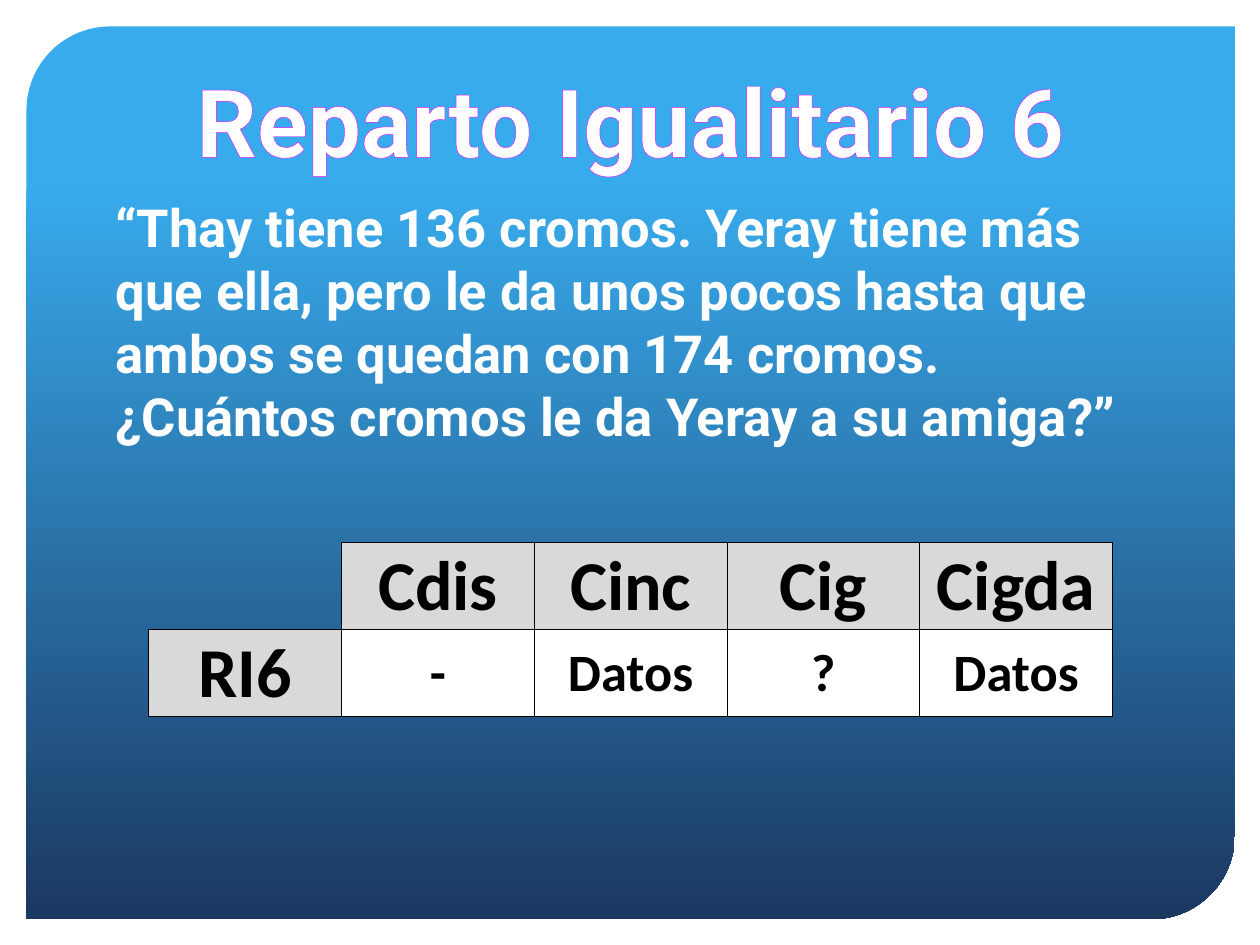
from dataclasses import dataclass

from lxml.etree import SubElement as Sub
from pptx import Presentation
from pptx.dml.color import RGBColor
from pptx.enum.shapes import MSO_SHAPE as Kind
from pptx.enum.text import MSO_ANCHOR as Anchor, MSO_AUTO_SIZE as Auto, PP_ALIGN as Align
from pptx.oxml.ns import qn
from pptx.util import Inches, Pt

WIDE, HIGH = Inches(10), Inches(7.5)
WHITE, BLACK, GREY = "FFFFFF", "000000", "D9D9D9"
CELL_W, CELL_H = Inches(1.53), Inches(0.69)


@dataclass
class Box:
    left: float
    top: float
    width: float
    height: float

    def place(self) -> tuple[int, int, int, int]:
        return (int(self.left * WIDE), int(self.top * HIGH),
                int(self.width * WIDE), int(self.height * HIGH))


@dataclass
class Cell:
    row: int
    col: int
    text: str = ""
    size: int = 40
    fill: str = GREY


def paint(tone: str) -> RGBColor:
    return RGBColor.from_string(tone)


def write(frame, text: str, *, size: int, font: str, tone: str = WHITE,
          align=Align.LEFT, edge: str = "") -> None:
    para = frame.paragraphs[0]
    para.alignment = align
    run = para.add_run()
    run.text = text
    face = run.font
    face.size, face.name, face.bold = Pt(size), font, True
    face.color.rgb = paint(tone)
    if edge:
        props = face._element
        line = Sub(props, qn("a:ln"), w=str(Pt(1)))
        Sub(Sub(line, qn("a:solidFill")), qn("a:srgbClr"), val=edge)
        props.insert(0, line)


def label(slide, box: Box, text: str, wrap: bool, **style) -> None:
    frame = slide.shapes.add_textbox(*box.place()).text_frame
    frame.word_wrap = wrap
    frame.auto_size = Auto.SHAPE_TO_FIT_TEXT
    write(frame, text, font="Roboto", **style)


def panel(slide, box: Box) -> None:
    shape = slide.shapes.add_shape(Kind.ROUND_2_DIAG_RECTANGLE, *box.place())
    shape.shadow.inherit = False
    shape.adjustments[0], shape.adjustments[1] = 0.094, 0
    shape.line.fill.background()
    shape.fill.gradient()
    shape.fill.gradient_angle = 270
    tones = ((0.17, "38ABED"), (1, "1B3861"))
    for stop, (place, tone) in zip(shape.fill.gradient_stops, tones):
        stop.position = place
        stop.color.rgb = paint(tone)


def border(cell, sides: str) -> None:
    props = cell._tc.get_or_add_tcPr()
    for side in "LRTB":
        line = Sub(props, qn(f"a:ln{side}"), w=str(Pt(0.5)))
        if side in sides:
            Sub(Sub(line, qn("a:solidFill")), qn("a:srgbClr"), val=BLACK)
        else:
            Sub(line, qn("a:noFill"))


def fill_cell(table, item: Cell) -> None:
    cell = table.cell(item.row, item.col)
    border(cell, "LRTB" if item.text else "RB")
    if not item.text:
        cell.fill.background()
        return
    cell.fill.solid()
    cell.fill.fore_color.rgb = paint(item.fill)
    cell.vertical_anchor = Anchor.MIDDLE
    cell.margin_left = cell.margin_right = cell.margin_top = Inches(0.01)
    cell.margin_bottom = 0
    write(cell.text_frame, item.text, size=item.size, font="Calibri",
          tone=BLACK, align=Align.CENTER)


def grid(slide, left: float, top: float) -> None:
    heads = ("Cdis", "Cinc", "Cig", "Cigda")
    data = ("-", "Datos", "?", "Datos")
    items = [Cell(0, 0), Cell(1, 0, "RI6")]
    items += [Cell(0, col, text) for col, text in enumerate(heads, 1)]
    items += [Cell(1, col, text, 30, WHITE) for col, text in enumerate(data, 1)]
    cols = len(heads) + 1
    table = slide.shapes.add_table(2, cols, int(left * WIDE), int(top * HIGH),
                                   cols * CELL_W, 2 * CELL_H).table
    table.first_row = table.horz_banding = False
    for col in table.columns:
        col.width = CELL_W
    for row in table.rows:
        row.height = CELL_H
    for item in items:
        fill_cell(table, item)


def main() -> None:
    deck = Presentation()
    deck.slide_width, deck.slide_height = WIDE, HIGH
    slide = deck.slides.add_slide(deck.slide_layouts[6])
    panel(slide, Box(0.021, 0.028, 0.959, 0.945))
    label(slide, Box(0.127, 0.06, 0.747, 0.135), "Reparto Igualitario 6", False,
          size=54, align=Align.CENTER, edge="E113FF")
    grid(slide, 0.118, 0.574)
    label(slide, Box(0.082, 0.2, 0.843, 0.283),
          "“Thay tiene 136 cromos. Yeray tiene más que ella, pero le da unos "
          "pocos hasta que ambos se quedan con 174 cromos. "
          "¿Cuántos cromos le da Yeray a su amiga?”", True, size=30)
    deck.save("out.pptx")


if __name__ == "__main__":
    main()
